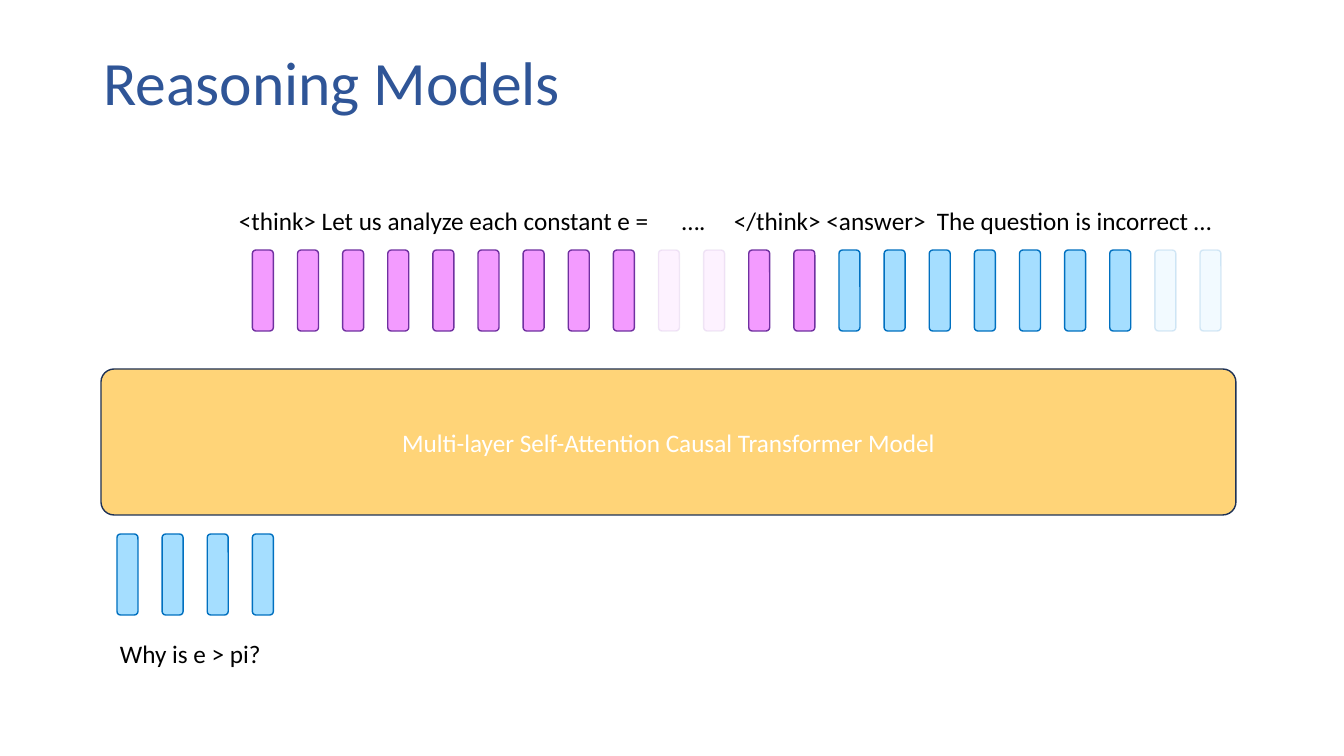
from lxml import etree
from pptx import Presentation
from pptx.dml.color import RGBColor
from pptx.enum.shapes import MSO_SHAPE
from pptx.enum.text import MSO_ANCHOR, PP_ALIGN
from pptx.oxml.ns import qn
from pptx.util import Pt

ROUND = MSO_SHAPE.ROUNDED_RECTANGLE
MIDDLE = MSO_ANCHOR.MIDDLE
LEFT, CENTER = PP_ALIGN.LEFT, PP_ALIGN.CENTER
PX = 914400 / 100.8

THEME = {
    "font": "Calibri", "head": 44, "body": 18, "line": 1,
    "title": "2F5597", "text": "000000", "label": "FFFFFF",
    "model": ("FFD478", "1E3256"),
    "think": ("F39BFF", "7030A0"),
    "token": ("A5DEFF", "0070C0"),
}


def write(frame, text, size, color, align=LEFT, stops=()):
    frame.word_wrap = True
    par = frame.paragraphs[0]
    par.text = text
    par.alignment = align
    if stops:
        tabs = etree.SubElement(par._p.get_or_add_pPr(), qn("a:tabLst"))
        for stop in stops:
            etree.SubElement(tabs, qn("a:tab"), pos=str(int(stop * PX)), algn="l")
    par.font.name = THEME["font"]
    par.font.size = Pt(THEME[size])
    par.font.color.rgb = RGBColor.from_string(THEME[color])
    return par


def block(box, kind, alphas=()):
    shape = slide.shapes.add_shape(ROUND, *[int(n * PX) for n in box])
    shape.shadow.inherit = False
    fill, line = THEME[kind]
    shape.fill.solid()
    shape.fill.fore_color.rgb = RGBColor.from_string(fill)
    shape.line.color.rgb = RGBColor.from_string(line)
    shape.line.width = Pt(THEME["line"])
    # Fill and line opacity, in percent
    paints = shape._element.spPr.findall(".//" + qn("a:srgbClr"))
    for paint, alpha in zip(paints, alphas):
        etree.SubElement(paint, qn("a:alpha"), val=str(alpha * 1000))
    return shape


deck = Presentation()
deck.slide_width, deck.slide_height = int(1344 * PX), int(756 * PX)
slide = deck.slides.add_slide(deck.slide_layouts[5])

# Title
title = slide.shapes.title
title.left, title.top, title.width, title.height = [
    int(n * PX) for n in (93, 40, 1159, 91)]
title.text_frame.vertical_anchor = MIDDLE
write(title.text_frame, "Reasoning Models", "head", "title").line_spacing = 0.9

# Model
model = block((101, 369, 1135, 146), "model")
model.adjustments[0] = 0.09
model.text_frame.vertical_anchor = MIDDLE
write(model.text_frame, "Multi-layer Self-Attention Causal Transformer Model",
      "body", "label", CENTER)

# Token bars: top, first column, then runs of count, kind and opacity
FIRST, LAST, COLS = 117, 1200, 25
step = (LAST - FIRST) / (COLS - 1)
rows = [
    (534, 0, [(4, "token", ())]),
    (250, 3, [(9, "think", ()), (2, "think", (13, 10)), (2, "think", ()),
              (7, "token", ()), (2, "token", (14, 14))]),
]
for top, col, runs in rows:
    for count, kind, alphas in runs:
        for _ in range(count):
            block((FIRST + col * step, top, 21, 81), kind, alphas)
            col += 1

# Prompt and output text
notes = [
    ((110, 633, 174, 40), "Why is e > pi?", ()),
    ((229, 200, 1001, 40),
     "<think> Let us analyze each constant e =\t….\t</think> <answer>\t"
     "The question is incorrect …", (443, 495, 698)),
]
for box, text, stops in notes:
    note = slide.shapes.add_textbox(*[int(n * PX) for n in box])
    write(note.text_frame, text, "body", "text", stops=stops)

deck.save("out.pptx")
